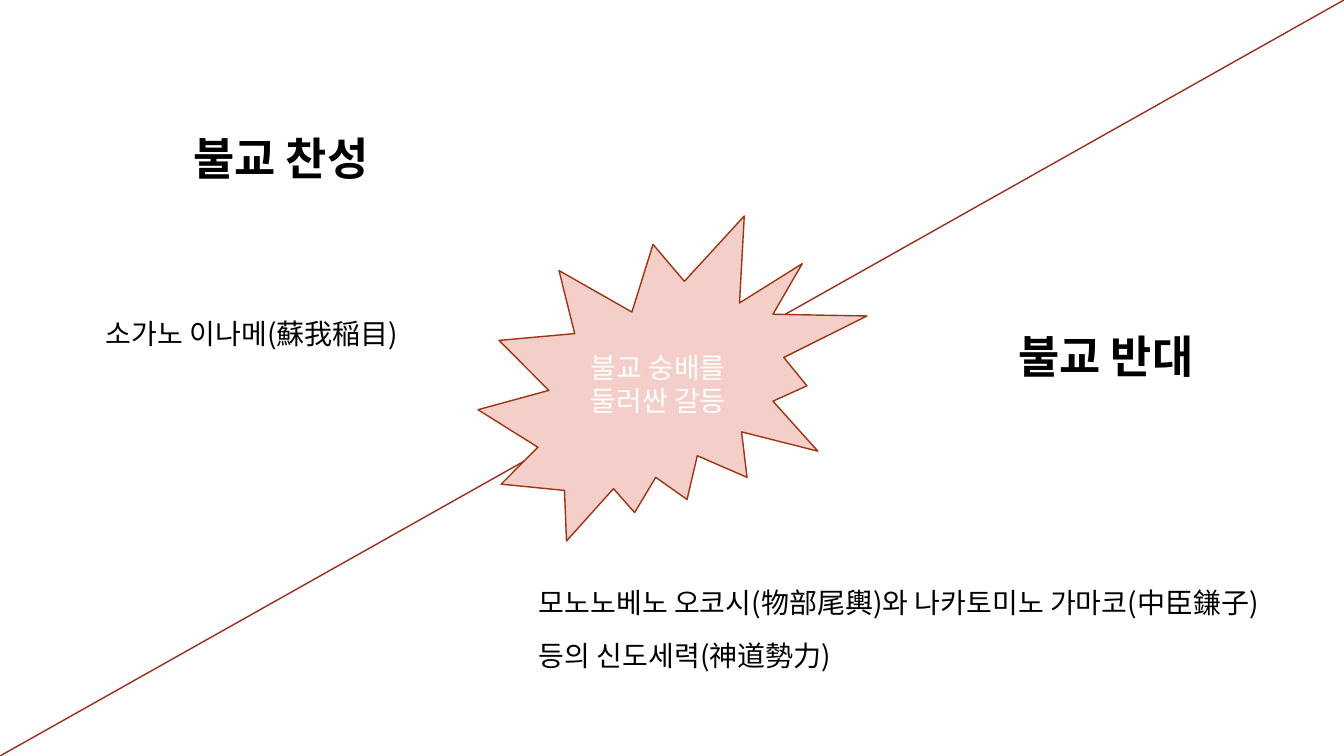
import pptx
import pptx.util
import pptx.dml.color
import pptx.enum.shapes
import pptx.enum.text
import pptx.oxml.ns
import lxml.etree

PX = 914400 / 100.8
FONT = "Noto Sans CJK KR"
HUES = {"white": "FFFFFF", "black": "000000", "pink": "F4CEC9",
        "rust": "9C3511", "red": "9B2D1F"}
KIND = pptx.enum.shapes.MSO_SHAPE
ALIGN = pptx.enum.text.PP_ALIGN
ANCHOR = pptx.enum.text.MSO_ANCHOR


def emu(*nums):
    return [pptx.util.Emu(round(n * PX)) for n in nums]


def write(shape, lines, look, form):
    frame = shape.text_frame
    frame.word_wrap = True
    frame.text = "\n".join(lines)
    for para in frame.paragraphs:
        for key, val in form.items():
            setattr(para, key, val)
        for run in para.runs:
            font = run.font
            font.color.rgb = pptx.dml.color.RGBColor.from_string(HUES[look["hue"]])
            for key, val in {"name": FONT, "size": pptx.util.Pt(look["size"]),
                             "bold": look["bold"]}.items():
                setattr(font, key, val)
            lxml.etree.SubElement(font._element, pptx.oxml.ns.qn("a:ea"), typeface=FONT)


deck = pptx.Presentation()
deck.slide_width, deck.slide_height = emu(1344, 756)
slide = deck.slides.add_slide(deck.slide_layouts[6])
rgb = pptx.dml.color.RGBColor.from_string

# Diagonal divider
line = slide.shapes.add_connector(
    pptx.enum.shapes.MSO_CONNECTOR.STRAIGHT, *emu(1344, 0, 0, 756))
line.line.color.rgb = rgb(HUES["red"])
line.line.width = pptx.util.Pt(1)
lxml.etree.SubElement(line._element.spPr, pptx.oxml.ns.qn("a:effectLst"))

# Burst and the two headings
head = {"size": 32, "hue": "black", "bold": True}
body = {"size": 20, "hue": "black", "bold": False}
for kind, box, fill, edge, text, look in [
    (KIND.EXPLOSION2, (478, 216, 389, 325), "pink", "rust",
     "불교 숭배를 둘러싼 갈등", body | {"hue": "white"}),
    (KIND.RECTANGLE, (131, 95, 300, 126), "white", "white", "불교 찬성", head),
    (KIND.RECTANGLE, (963, 290, 286, 131), "white", "white", "불교 반대", head),
]:
    shape = slide.shapes.add_shape(kind, *emu(*box))
    shape.shadow.inherit = False
    shape.fill.solid()
    shape.fill.fore_color.rgb = rgb(HUES[fill])
    shape.line.color.rgb = rgb(HUES[edge])
    shape.line.width = pptx.util.Pt(1)
    shape.text_frame.vertical_anchor = ANCHOR.MIDDLE
    write(shape, [text], look, {"alignment": ALIGN.CENTER})

# People on each side
for box, lines, form in [
    ((96, 312, 330, 44), ["소가노 이나메(蘇我稲目)"], {"alignment": ALIGN.LEFT}),
    ((529, 560, 801, 111),
     ["모노노베노 오코시(物部尾輿)와 나카토미노 가마코(中臣鎌子)", "등의 신도세력(神道勢力)"],
     {"alignment": ALIGN.JUSTIFY, "line_spacing": 1.6}),
]:
    note = slide.shapes.add_textbox(*emu(*box))
    note.text_frame.auto_size = pptx.enum.text.MSO_AUTO_SIZE.SHAPE_TO_FIT_TEXT
    write(note, lines, body, form)

deck.save("out.pptx")
